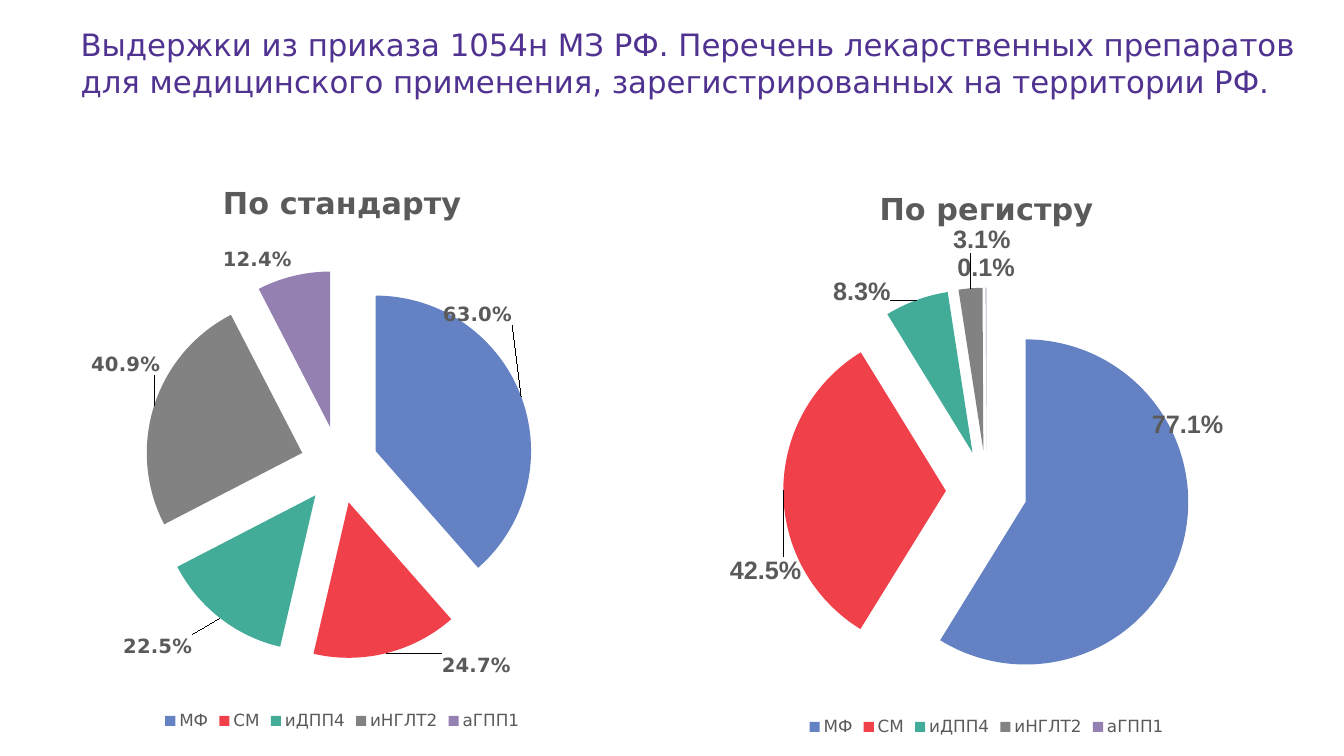
import pptx
import pptx.chart.data
import pptx.dml.color
import pptx.enum.chart
import pptx.oxml
import pptx.oxml.ns
import pptx.util
from pptx.util import Inches

INK = {"head": "503291", "text": "5A5A5A"}
DRUGS = {"МФ": "6482C3", "СМ": "F0414B", "иДПП4": "43AC99",
         "иНГЛТ2": "828282", "аГПП1": "9580B2"}
SANS, ARIAL = "DejaVu Sans", "Arial"
FORMAT = "0.0%"
NS = pptx.oxml.ns.nsdecls("c")

# Plot is x, y, width, height and shifts are label offsets, as chart fractions
PIES = [
    dict(title="По стандарту", box=(0.43, 1.59, 5.93, 5.7),
         vals=(0.63, 0.247, 0.225, 0.409, 0.124),
         face=SANS, size=14, plot=(0.17, 0.19, 0.65, 0.68),
         shifts=[(-0.14, -0.12), (0.09, -0.01), (-0.04, 0.02), (0.02, -0.05)]),
    dict(title="По регистру", box=(6.82, 1.65, 5.93, 5.7),
         vals=(0.771, 0.425, 0.083, 0.031, 0.001),
         face=ARIAL, size=18, plot=(0.16, 0.21, 0.68, 0.71),
         shifts=[(-0.06, -0.24), (0.04, 0.14), (-0.04, 0.02), (0.02, -0.05)]),
]


def style(font, size, face, ink, bold=False):
    font.size = pptx.util.Pt(size)
    font.name = face
    font.bold = bold
    font.color.rgb = pptx.dml.color.RGBColor.from_string(ink)


def layout(parts):
    body = "".join(f'<c:{tag} val="{val}"/>' for tag, val in parts)
    return pptx.oxml.parse_xml(
        f"<c:layout {NS}><c:manualLayout>{body}</c:manualLayout></c:layout>")


def add_head(slide, box, text):
    frame = slide.shapes.add_textbox(*map(Inches, box)).text_frame
    frame.word_wrap = True
    frame.margin_left = frame.margin_right = Inches(0.13)
    frame.margin_top = frame.margin_bottom = Inches(0.07)
    run = frame.paragraphs[0].add_run()
    run.text = text
    style(run.font, 22, SANS, INK["head"])


def add_pie(slide, box, title, vals, face, size, plot, shifts):
    data = pptx.chart.data.CategoryChartData(number_format=FORMAT)
    data.categories = list(DRUGS)
    data.add_series("Series 1", vals)
    chart = slide.shapes.add_chart(
        pptx.enum.chart.XL_CHART_TYPE.PIE, *map(Inches, box), data).chart
    style(chart.font, 18, ARIAL, INK["text"])

    # Title and legend
    chart.has_title = True
    run = chart.chart_title.text_frame.paragraphs[0].add_run()
    run.text = title
    style(run.font, 21.6, SANS, INK["text"], True)
    chart.has_legend = True
    chart.legend.position = pptx.enum.chart.XL_LEGEND_POSITION.BOTTOM
    chart.legend.include_in_layout = False
    style(chart.legend.font, 12, SANS, INK["text"])

    # Plot area
    pie = chart.plots[0]
    pie.vary_by_categories = True
    area = chart.element.find(".//" + pptx.oxml.ns.qn("c:plotArea"))
    for old in area.findall(pptx.oxml.ns.qn("c:layout")):
        area.remove(old)
    area.insert(0, layout([("layoutTarget", "inner"), ("xMode", "edge"),
                           ("yMode", "edge"), *zip("xywh", plot)]))

    # Slices, pulled apart
    series = pie.series[0]
    for spot, ink in enumerate(DRUGS.values()):
        fill = series.points[spot].format.fill
        fill.solid()
        fill.fore_color.rgb = pptx.dml.color.RGBColor.from_string(ink)
    first = series.points[0].format.fill and series._element.find(
        pptx.oxml.ns.qn("c:dPt"))
    first.addprevious(
        pptx.oxml.parse_xml(f'<c:explosion {NS} val="25"/>'))

    # Value labels, some of them moved
    outside = pptx.enum.chart.XL_LABEL_POSITION.OUTSIDE_END
    labels = series.data_labels
    labels.show_value = True
    labels.show_percentage = False
    labels.number_format = FORMAT
    labels.number_format_is_linked = False
    labels.position = outside
    style(labels.font, size, face, INK["text"], True)
    for spot, shift in enumerate(shifts):
        label = series.points[spot].data_label
        style(label.font, size, face, INK["text"], True)
        label.position = outside
    moved = labels._element.findall(pptx.oxml.ns.qn("c:dLbl"))
    for item, shift in zip(moved, shifts):
        item.insert(1, layout(zip("xy", shift)))
        item.insert(2, pptx.oxml.parse_xml(
            f'<c:numFmt {NS} formatCode="{FORMAT}" sourceLinked="0"/>'))


def main():
    deck = pptx.Presentation()
    deck.slide_width, deck.slide_height = Inches(13.33), Inches(7.5)
    slide = deck.slides.add_slide(deck.slide_layouts[6])
    add_head(slide, (0.67, 0.19, 12.54, 1.03),
             "Выдержки из приказа 1054н МЗ РФ. Перечень лекарственных "
             "препаратов для медицинского применения, зарегистрированных "
             "на территории РФ.")
    for pie in PIES:
        add_pie(slide, **pie)
    deck.save("out.pptx")


if __name__ == "__main__":
    main()
